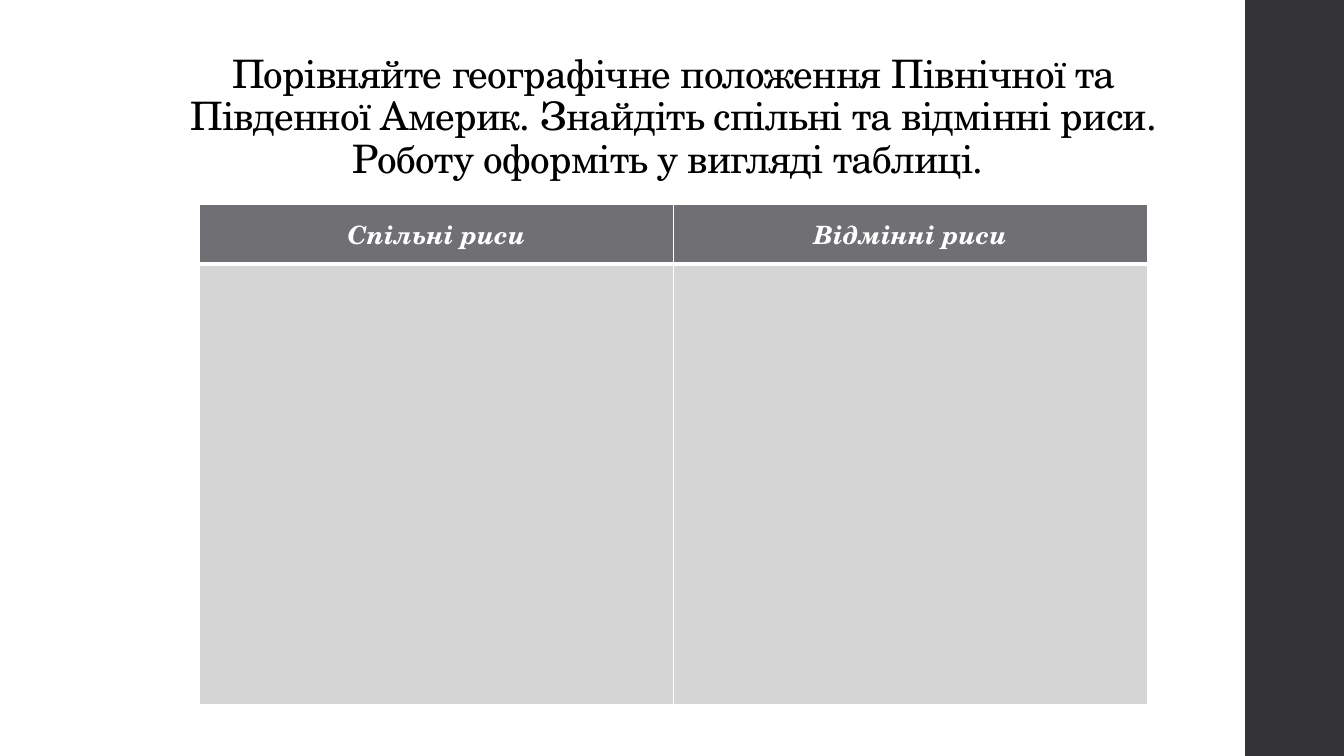
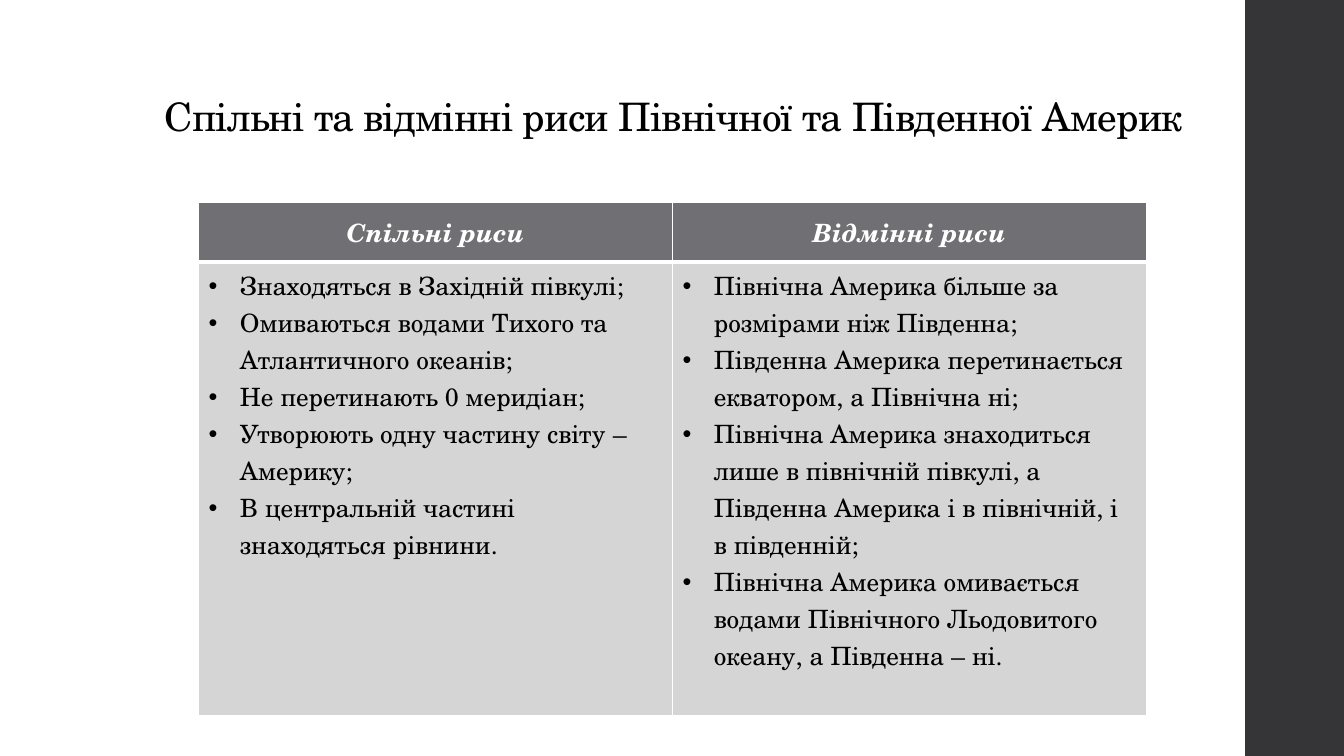
from dataclasses import dataclass

from lxml.etree import SubElement
from pptx import Presentation
from pptx.dml.color import RGBColor
from pptx.enum.shapes import MSO_SHAPE
from pptx.enum.text import MSO_ANCHOR, PP_ALIGN
from pptx.oxml.ns import qn
from pptx.util import Inches, Pt

# Shared look
FONT = "TeX Gyre Schola"
WHITE = RGBColor(0xFF, 0xFF, 0xFF)
BLACK = RGBColor(0, 0, 0)
BAND = RGBColor(0x35, 0x35, 0x37)
HEADER_FILL = RGBColor(0x6F, 0x6F, 0x74)
BODY_FILL = RGBColor(0xD5, 0xD5, 0xD6)

SLIDE_W, SLIDE_H = 13.33, 7.5
BAND_LEFT, BAND_W = 12.35, 1
TITLE_LEFT, TITLE_TOP, TITLE_W = 1.38, 0.4, 10.6
COLUMN_W, HEADER_H = 4.7, 0.59
BULLET_INDENT = 0.31
HEADINGS = ("Спільні риси", "Відмінні риси")


@dataclass(frozen=True)
class Comparison:
    title: str
    title_height: float
    left: float
    top: float
    body_height: float
    columns: tuple[tuple[str, ...], ...]


COMPARISONS = (
    Comparison(
        "Порівняйте географічне положення Північної та Південної Америк. "
        "Знайдіть спільні та відмінні риси. Роботу оформіть у вигляді таблиці. ",
        1.45, 1.98, 2.03, 4.37, ((), ()),
    ),
    Comparison(
        "Спільні та відмінні риси Північної та Південної Америк",
        1.04, 1.97, 2.01, 4.5,
        (
            (
                "Знаходяться в Західній півкулі;",
                "Омиваються водами Тихого та Атлантичного океанів;",
                "Не перетинають 0 меридіан;",
                "Утворюють одну частину світу – Америку;",
                "В центральній частині знаходяться рівнини.",
            ),
            (
                "Північна Америка більше за розмірами ніж Південна;",
                "Південна Америка перетинається екватором, а Північна ні;",
                "Північна Америка знаходиться лише в північній півкулі, "
                "а Південна Америка і в північній, і в південній;",
                "Північна Америка омивається водами Північного Льодовитого "
                "океану, а Південна – ні.",
            ),
        ),
    ),
)


def set_font(paragraph, size: float, color: RGBColor, emphasis: bool = False) -> None:
    font = paragraph.font
    font.name, font.size = FONT, Pt(size)
    font.bold = font.italic = emphasis
    font.color.rgb = color


def add_band(slide) -> None:
    band = slide.shapes.add_shape(
        MSO_SHAPE.RECTANGLE, Inches(BAND_LEFT), 0, Inches(BAND_W), Inches(SLIDE_H))
    band.shadow.inherit = False
    band.fill.solid()
    band.fill.fore_color.rgb = BAND
    band.line.fill.background()


def add_title(slide, text: str, height: float) -> None:
    frame = slide.shapes.add_textbox(
        Inches(TITLE_LEFT), Inches(TITLE_TOP), Inches(TITLE_W), Inches(height)).text_frame
    frame.word_wrap = True
    frame.vertical_anchor = MSO_ANCHOR.BOTTOM
    paragraph = frame.paragraphs[0]
    paragraph.alignment = PP_ALIGN.CENTER
    paragraph.line_spacing = 0.9
    run = paragraph.add_run()
    run.text = text
    set_font(paragraph, 28, BLACK)
    # Letter spacing in hundredths of a point
    run.font._element.set("spc", "-50")


def style_cell(cell, fill: RGBColor, bottom_width: float) -> None:
    # Borders come before the fill in the cell properties
    properties = cell._tc.get_or_add_tcPr()
    for side in "LRTB":
        width = bottom_width if side == "B" else 1
        border = SubElement(properties, qn(f"a:ln{side}"), w=str(Pt(width)))
        solid = SubElement(border, qn("a:solidFill"))
        SubElement(solid, qn("a:srgbClr"), val=str(WHITE))
    cell.fill.solid()
    cell.fill.fore_color.rgb = fill


def add_bullet(paragraph) -> None:
    properties = paragraph._p.get_or_add_pPr()
    indent = Inches(BULLET_INDENT)
    properties.set("marL", str(indent))
    properties.set("indent", str(-indent))
    bullet_font = SubElement(properties, qn("a:buFont"), typeface="Arial")
    bullet_font.addnext(SubElement(properties, qn("a:buChar"), char="•"))


def add_comparison_table(slide, comparison: Comparison) -> None:
    table = slide.shapes.add_table(
        2, len(HEADINGS), Inches(comparison.left), Inches(comparison.top),
        Inches(COLUMN_W * len(HEADINGS)),
        Inches(HEADER_H + comparison.body_height)).table
    table.horz_banding = False
    table.rows[0].height = Inches(HEADER_H)
    table.rows[1].height = Inches(comparison.body_height)

    for index, (heading, features) in enumerate(zip(HEADINGS, comparison.columns)):
        table.columns[index].width = Inches(COLUMN_W)

        # Heading
        header = table.cell(0, index)
        style_cell(header, HEADER_FILL, 3)
        header.vertical_anchor = MSO_ANCHOR.MIDDLE
        header.text = heading
        label = header.text_frame.paragraphs[0]
        label.alignment = PP_ALIGN.CENTER
        set_font(label, 18, WHITE, emphasis=True)

        # Features
        body = table.cell(1, index)
        style_cell(body, BODY_FILL, 1)
        body.text = "\n".join(features)
        if features:
            for paragraph in body.text_frame.paragraphs:
                set_font(paragraph, 18, BLACK)
                add_bullet(paragraph)


def main() -> None:
    deck = Presentation()
    deck.slide_width, deck.slide_height = Inches(SLIDE_W), Inches(SLIDE_H)
    for comparison in COMPARISONS:
        slide = deck.slides.add_slide(deck.slide_layouts[6])
        add_band(slide)
        add_title(slide, comparison.title, comparison.title_height)
        add_comparison_table(slide, comparison)
    deck.save("out.pptx")


if __name__ == "__main__":
    main()
